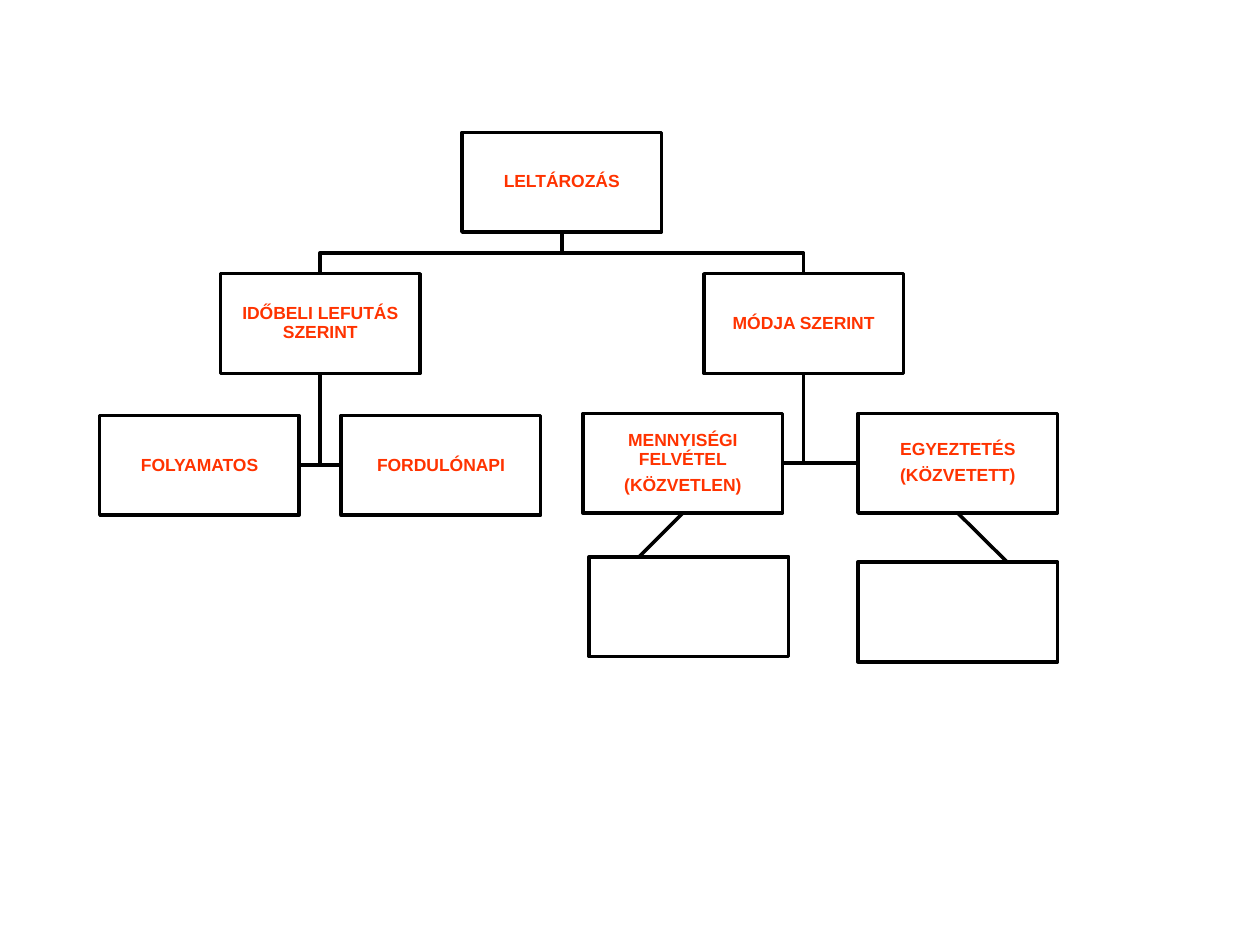
"""Build a slide with the tree of stocktaking methods."""
from pptx import Presentation
from pptx.dml.color import RGBColor
from pptx.enum.shapes import MSO_CONNECTOR, MSO_SHAPE
from pptx.enum.text import MSO_ANCHOR, PP_ALIGN
from pptx.util import Pt
from lxml.etree import SubElement
from pptx.oxml.ns import qn

BLACK = RGBColor(0x00, 0x00, 0x00)
WHITE = RGBColor(0xFF, 0xFF, 0xFF)
ORANGE = RGBColor(0xFF, 0x33, 0x00)
BOX_W, BOX_H = 114, 57
LINE_W = Pt(2)

BOXES = {
    "root": (264, 75.6, ["LELTÁROZÁS"]),
    "timing": (126, 156.4, ["IDŐBELI LEFUTÁS SZERINT"]),
    "continuous": (57, 237.4, ["FOLYAMATOS"]),
    "closing_day": (195, 237.4, ["FORDULÓNAPI"]),
    "method": (402.2, 156.4, ["MÓDJA SZERINT"]),
    "counting": (333.2, 236.2, ["MENNYISÉGI FELVÉTEL", "(KÖZVETLEN)"]),
    "counting_detail": (336.7, 318.2, []),
    "matching": (490.3, 236.2, ["EGYEZTETÉS", "(KÖZVETETT)"]),
    "matching_detail": (490.3, 321.2, []),
}


def anchor(name, across, down):
    left, top, _ = BOXES[name]
    return left + across * BOX_W, top + down * BOX_H


prs = Presentation()
prs.slide_width, prs.slide_height = Pt(720), Pt(540)
slide = prs.slides.add_slide(prs.slide_layouts[6])
shapes = slide.shapes

elbows = []
for child in ("timing", "method"):
    start, end = anchor("root", 0.5, 1), anchor(child, 0.5, 0)
    middle = (start[1] + end[1]) / 2
    elbows.append([start, (start[0], middle), (end[0], middle), end])
for parent, child, side in [
    ("timing", "continuous", 1),
    ("timing", "closing_day", 0),
    ("method", "counting", 1),
    ("method", "matching", 0),
]:
    start, end = anchor(parent, 0.5, 1), anchor(child, side, 0.5)
    elbows.append([start, (start[0], end[1]), end])

for elbow in elbows:
    points = [(Pt(x), Pt(y)) for x, y in elbow]
    builder = shapes.build_freeform(*points[0])
    builder.add_line_segments(points[1:], close=False)
    branch = builder.convert_to_shape()
    branch.shadow.inherit = False
    branch.fill.background()
    branch.line.color.rgb = BLACK
    branch.line.width = LINE_W

for parent, child, side in [
    ("counting", "counting_detail", 0),
    ("matching", "matching_detail", 1),
]:
    ends = anchor(parent, 0.5, 1) + anchor(child, side, 0.5)
    link = shapes.add_connector(MSO_CONNECTOR.STRAIGHT, *map(Pt, ends))
    link.line.color.rgb = BLACK
    link.line.width = LINE_W
    SubElement(link._element.spPr, qn("a:effectLst"))

for left, top, lines in BOXES.values():
    box = shapes.add_shape(
        MSO_SHAPE.RECTANGLE, Pt(left), Pt(top), Pt(BOX_W), Pt(BOX_H)
    )
    box.shadow.inherit = False
    box.fill.solid()
    box.fill.fore_color.rgb = WHITE
    box.line.color.rgb = BLACK
    box.line.width = LINE_W
    frame = box.text_frame
    frame.word_wrap = True
    frame.vertical_anchor = MSO_ANCHOR.MIDDLE
    frame.margin_left = frame.margin_right = Pt(0.75)
    frame.margin_top = frame.margin_bottom = Pt(0.75)
    for index, line in enumerate(lines):
        label = frame.add_paragraph() if index else frame.paragraphs[0]
        label.text = line
        label.alignment = PP_ALIGN.CENTER
        label.line_spacing = 0.9
        label.space_after = Pt(4)
        label.font.name = "Arial"
        label.font.size = Pt(10)
        label.font.bold = True
        label.font.color.rgb = ORANGE

prs.save("out.pptx")
